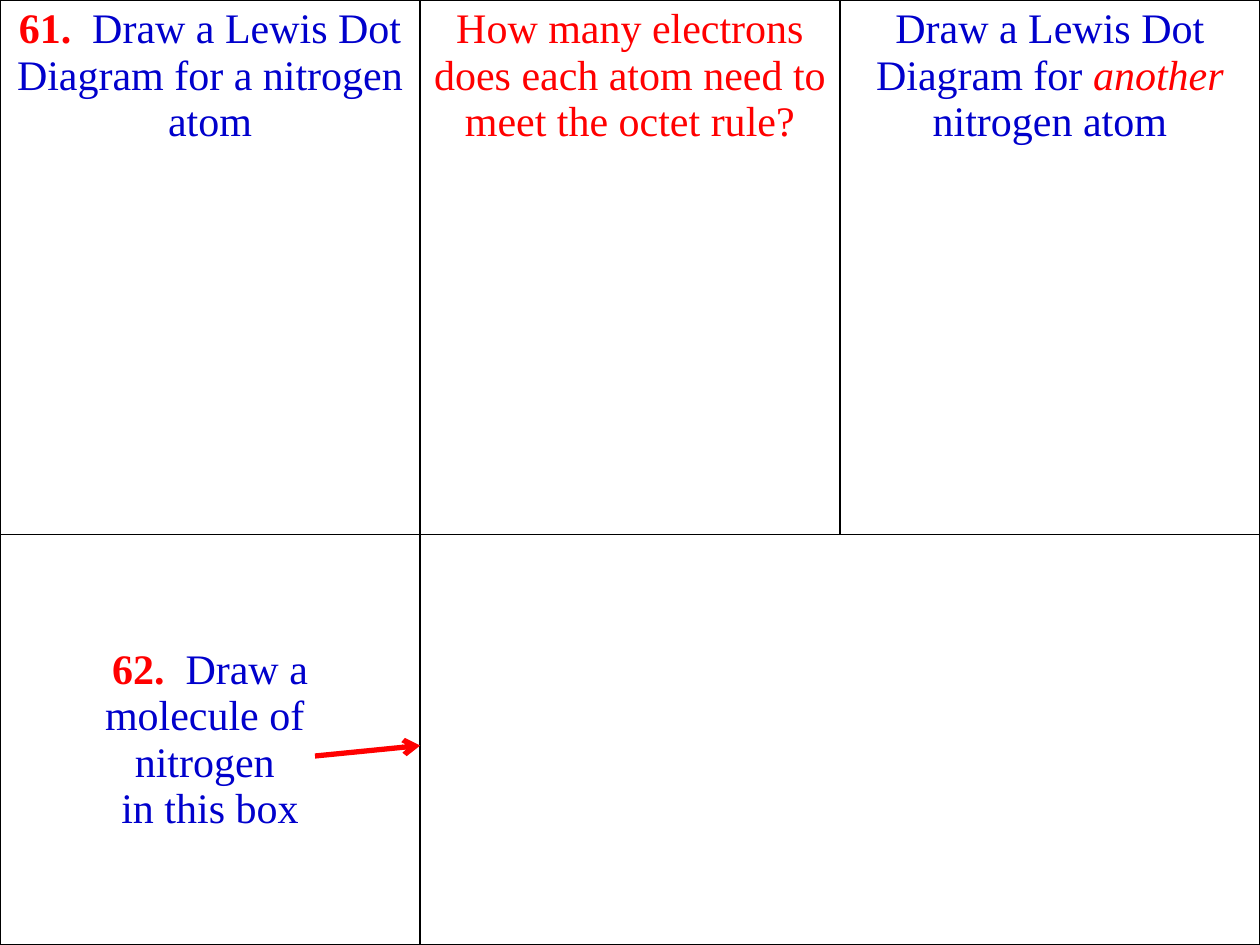
from lxml.etree import SubElement
from pptx import Presentation
from pptx.dml.color import RGBColor
from pptx.enum.shapes import MSO_CONNECTOR as Link
from pptx.enum.text import MSO_ANCHOR as Anchor, PP_ALIGN as Align
from pptx.oxml import parse_xml
from pptx.oxml.ns import nsdecls, qn
from pptx.util import Cm, Pt

RED, BLUE, BLACK = "FF0000", "0000CC", "000000"
WIDE, HIGH = 25.4, 19.05
TOP = 10.77
COLS = 3


def color(code):
    """Turn a hex string into a colour."""
    return RGBColor.from_string(code)


def add_run(para, text, code, bold=False, italic=False):
    """Add one styled run to a paragraph, with line breaks at newlines."""
    for i, line in enumerate(text.split("\n")):
        if i:
            para.add_line_break()
        if line:
            run = para.add_run()
            run.text = line
            font = run.font
            font.name, font.size = "Times New Roman", Pt(24)
            font.bold, font.italic = bold, italic
            font.color.rgb = color(code)


def frame(cell):
    """Clear the fill of a cell and rule its four sides."""
    cell.fill.background()
    props = cell._tc.get_or_add_tcPr()
    for i, side in enumerate("LRTB"):
        props.insert(i, parse_xml(
            f'<a:ln{side} {nsdecls("a")} w="{Pt(1)}"><a:solidFill>'
            f'<a:srgbClr val="{BLACK}"/></a:solidFill></a:ln{side}>'))


def fill_cell(cell, runs, anchor=Anchor.TOP):
    """Write centred runs in a cell."""
    cell.vertical_anchor = anchor
    para = cell.text_frame.paragraphs[0]
    para.alignment = Align.CENTER
    for run in runs:
        add_run(para, *run)


def add_grid(slide):
    """Add the worksheet table that covers the slide."""
    grid = slide.shapes.add_table(2, COLS, 0, 0, Cm(WIDE), Cm(HIGH)).table
    grid.first_row = grid.horz_banding = False
    for col in grid.columns:
        col.width = Cm(WIDE / COLS)
    for row, high in zip(grid.rows, (TOP, HIGH - TOP)):
        row.height = Cm(high)
    for cell in grid.iter_cells():
        frame(cell)
    grid.cell(1, 1).merge(grid.cell(1, 2))
    return grid


def add_arrow(slide, start, end):
    """Add a red arrow between two points in centimetres."""
    arrow = slide.shapes.add_connector(
        Link.STRAIGHT, *(Cm(n) for n in (*start, *end)))
    arrow.line.width = Pt(3)
    arrow.line.color.rgb = color(RED)
    SubElement(arrow.line._get_or_add_ln(), qn("a:tailEnd"), type="arrow")
    SubElement(arrow._element.spPr, qn("a:effectLst"))


def main():
    """Build the worksheet slide and save it."""
    deck = Presentation()
    deck.slide_width, deck.slide_height = Cm(WIDE), Cm(HIGH)
    slide = deck.slides.add_slide(deck.slide_layouts[6])
    grid = add_grid(slide)
    fill_cell(grid.cell(0, 0), [
        ("61.", RED, True),
        ("  Draw a Lewis Dot Diagram for a nitrogen atom", BLUE)])
    fill_cell(grid.cell(0, 1), [
        ("How many electrons does each atom need to meet the octet rule?", RED)])
    fill_cell(grid.cell(0, 2), [
        ("Draw a Lewis Dot Diagram for ", BLUE),
        ("another", RED, False, True),
        (" nitrogen atom", BLUE)])
    fill_cell(grid.cell(1, 0), [
        ("62.", RED, True),
        ("  Draw a\nmolecule of \nnitrogen \nin this box", BLUE)],
        Anchor.MIDDLE)
    add_arrow(slide, (6.35, 15.24), (8.47, 15.03))
    deck.save("out.pptx")


if __name__ == "__main__":
    main()
